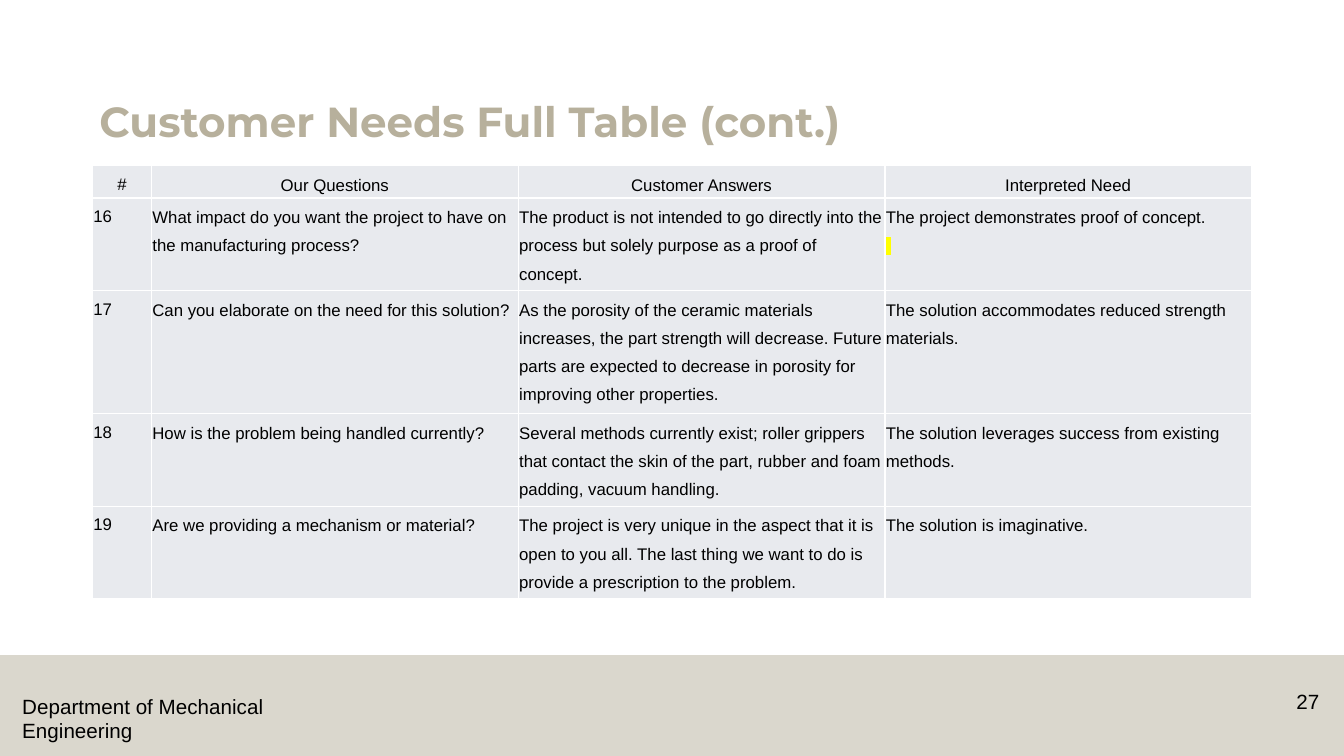
from lxml import etree
from pptx import Presentation
from pptx.dml.color import RGBColor
from pptx.enum import shapes, text
from pptx.oxml import ns
from pptx.util import Pt

COLORS = {"tan": "B7B09C", "black": "000000", "cell": "E8EAEE",
          "border": "FFFFFF", "mark": "FFFF00"}
HEADER = ["#", "Our Questions", "Customer Answers", "Interpreted Need"]
NEEDS = [
    ["16", "What impact do you want the project to have on the manufacturing process?",
     "The product is not intended to go directly into the process but solely purpose "
     "as a proof of concept.",
     "The project demonstrates proof of concept."],
    ["17", "Can you elaborate on the need for this solution?",
     "As the porosity of the ceramic materials increases, the part strength will decrease. "
     "Future parts are expected to decrease in porosity for improving other properties.",
     "The solution accommodates reduced strength materials."],
    ["18", "How is the problem being handled currently?",
     "Several methods currently exist; roller grippers that contact the skin of the part, "
     "rubber and foam padding, vacuum handling.",
     "The solution leverages success from existing methods."],
    ["19", "Are we providing a mechanism or material?",
     "The project is very unique in the aspect that it is open to you all. The last thing "
     "we want to do is provide a prescription to the problem.",
     "The solution is imaginative."],
]
COLUMN_WIDTHS = [42.2, 262, 262, 261.8]
ROW_HEIGHTS = [21, 62, 82.8, 62, 62]


def add_span(para, words, size, color="black", font="Arial", bold=False):
    span = para.add_run()
    span.text = words
    span.font.size = Pt(size)
    span.font.name = font
    span.font.bold = bold
    span.font.color.rgb = RGBColor.from_string(COLORS[color])
    return span


def add_box(left, top, width, height, side=7.2, edge=3.6):
    """Add a wrapping text box and return its text frame."""
    frame = page.shapes.add_textbox(Pt(left), Pt(top), Pt(width), Pt(height)).text_frame
    frame.word_wrap = True
    frame.margin_left = frame.margin_right = Pt(side)
    frame.margin_top = frame.margin_bottom = Pt(edge)
    return frame


deck = Presentation()
deck.slide_width, deck.slide_height = Pt(960), Pt(540)
page = deck.slides.add_slide(deck.slide_layouts[6])

# Footer band, department and page number
band = page.shapes.add_shape(shapes.MSO_SHAPE.RECTANGLE, 0, Pt(468), Pt(960), Pt(72))
band.shadow.inherit = False
band.line.fill.background()
band.fill.solid()
band.fill.fore_color.rgb = RGBColor.from_string(COLORS["tan"])
band_color = band.fill._xPr.find(".//" + ns.qn("a:srgbClr"))
etree.SubElement(band_color, ns.qn("a:alpha"), val="50000")

department = add_box(8.8, 491.8, 258.5, 42.5)
add_span(department.paragraphs[0], "Department of Mechanical Engineering", 14.7)

number = add_box(894.2, 488.9, 55.4, 28.8)
number.paragraphs[0].alignment = text.PP_ALIGN.RIGHT
add_span(number.paragraphs[0], "27", 14.7)

# Title
title = add_box(66, 28.8, 828, 78.5, side=5, edge=2.9)
title.vertical_anchor = text.MSO_ANCHOR.BOTTOM
title.paragraphs[0].line_spacing = 0.9
add_span(title.paragraphs[0], "Customer Needs Full Table (cont.)", 30, "tan", "Montserrat", True)

# Customer needs table
table = page.shapes.add_table(len(NEEDS) + 1, len(HEADER), Pt(66), Pt(118.4),
                              Pt(sum(COLUMN_WIDTHS)), Pt(sum(ROW_HEIGHTS))).table
for column, width in zip(table.columns, COLUMN_WIDTHS):
    column.width = Pt(width)
for row, height in zip(table.rows, ROW_HEIGHTS):
    row.height = Pt(height)

for row_index, entries in enumerate([HEADER] + NEEDS):
    for column_index, words in enumerate(entries):
        cell = table.cell(row_index, column_index)
        cell.margin_left = cell.margin_right = Pt(0.7)
        cell.margin_top = cell.margin_bottom = Pt(0.7 if column_index else 0)
        properties = cell._tc.get_or_add_tcPr()
        for side in ("a:lnL", "a:lnR", "a:lnT", "a:lnB"):
            line = etree.SubElement(properties, ns.qn(side), w=str(Pt(1)))
            paint = etree.SubElement(line, ns.qn("a:solidFill"))
            etree.SubElement(paint, ns.qn("a:srgbClr"), val=COLORS["border"])
        cell.fill.solid()
        cell.fill.fore_color.rgb = RGBColor.from_string(COLORS["cell"])
        para = cell.text_frame.paragraphs[0]
        para.line_spacing = 1.5
        if row_index == 0:
            para.alignment = text.PP_ALIGN.CENTER
        add_span(para, words, 12)

# Highlighted blank under the first interpreted need
para = table.cell(1, 3).text_frame.add_paragraph()
para.line_spacing = 1.5
blank = add_span(para, " ", 12)
highlight = etree.Element(ns.qn("a:highlight"))
etree.SubElement(highlight, ns.qn("a:srgbClr"), val=COLORS["mark"])
blank.font._element.find(ns.qn("a:solidFill")).addnext(highlight)

deck.save("out.pptx")
